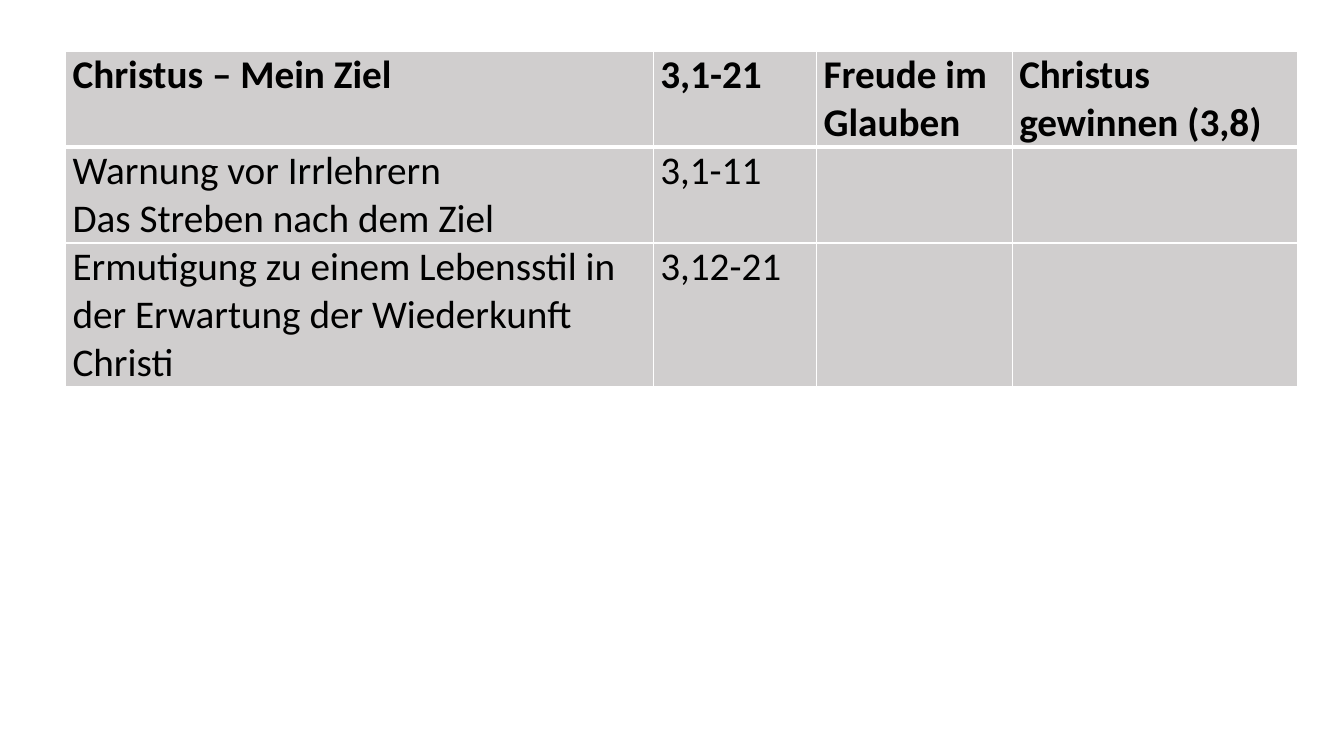
from dataclasses import dataclass

from lxml import etree
from pptx import Presentation
from pptx.dml.color import RGBColor
from pptx.enum.text import MSO_ANCHOR
from pptx.oxml.ns import qn
from pptx.table import _Cell
from pptx.util import Inches, Pt

TOP = MSO_ANCHOR.TOP
FONT = "Calibri"
TEXT_COLOR = "000000"
CELL_COLOR = "D0CECE"
BORDER_COLOR = "FFFFFF"
COLUMN_WIDTHS = (5.83, 1.62, 1.94, 2.83)


@dataclass
class Section:
    height: float
    texts: tuple[str, ...]
    is_header: bool = False


SECTIONS = (
    Section(0.93, ("Christus – Mein Ziel", "3,1-21", "Freude im Glauben",
                   "Christus gewinnen (3,8)"), is_header=True),
    Section(0.93, ("Warnung vor Irrlehrern\nDas Streben nach dem Ziel", "3,1-11", "", "")),
    Section(1.41, ("Ermutigung zu einem Lebensstil in der Erwartung der Wiederkunft Christi",
                   "3,12-21", "", "")),
)


def color(value: str) -> RGBColor:
    return RGBColor.from_string(value)


def set_borders(cell: _Cell, widths: dict[str, float]) -> None:
    properties = cell._tc.get_or_add_tcPr()
    # Border lines come before the fill in the cell properties
    for index, (side, width) in enumerate(widths.items()):
        line = etree.Element(qn(f"a:ln{side}"), w=str(Pt(width)))
        fill = etree.SubElement(line, qn("a:solidFill"))
        etree.SubElement(fill, qn("a:srgbClr"), val=BORDER_COLOR)
        properties.insert(index, line)


def fill_cell(cell: _Cell, text: str, bold: bool) -> None:
    cell.margin_left = cell.margin_right = Inches(0.07)
    cell.margin_top = cell.margin_bottom = 0
    cell.vertical_anchor = TOP
    cell.fill.solid()
    cell.fill.fore_color.rgb = color(CELL_COLOR)
    cell.text = text
    for para in cell.text_frame.paragraphs:
        para.font.name = FONT
        para.font.size = Pt(28)
        para.font.bold = bold
        para.font.color.rgb = color(TEXT_COLOR)


def main() -> None:
    deck = Presentation()
    deck.slide_width, deck.slide_height = Inches(13.33), Inches(7.5)
    page = deck.slides.add_slide(deck.slide_layouts[6])

    # Outline table
    height = sum(section.height for section in SECTIONS)
    table = page.shapes.add_table(
        len(SECTIONS), len(COLUMN_WIDTHS), Inches(0.65), Inches(0.51),
        Inches(sum(COLUMN_WIDTHS)), Inches(height)).table
    table.horz_banding = False
    for column, width in zip(table.columns, COLUMN_WIDTHS):
        column.width = Inches(width)

    # Sections, with a thick line between header and body
    for index, (row, section) in enumerate(zip(table.rows, SECTIONS)):
        row.height = Inches(section.height)
        below_header = index > 0 and SECTIONS[index - 1].is_header
        widths = {"L": 1, "R": 1, "T": 3 if below_header else 1,
                  "B": 3 if section.is_header else 1}
        for cell, text in zip(row.cells, section.texts):
            fill_cell(cell, text, section.is_header)
            set_borders(cell, widths)

    deck.save("out.pptx")


if __name__ == "__main__":
    main()
